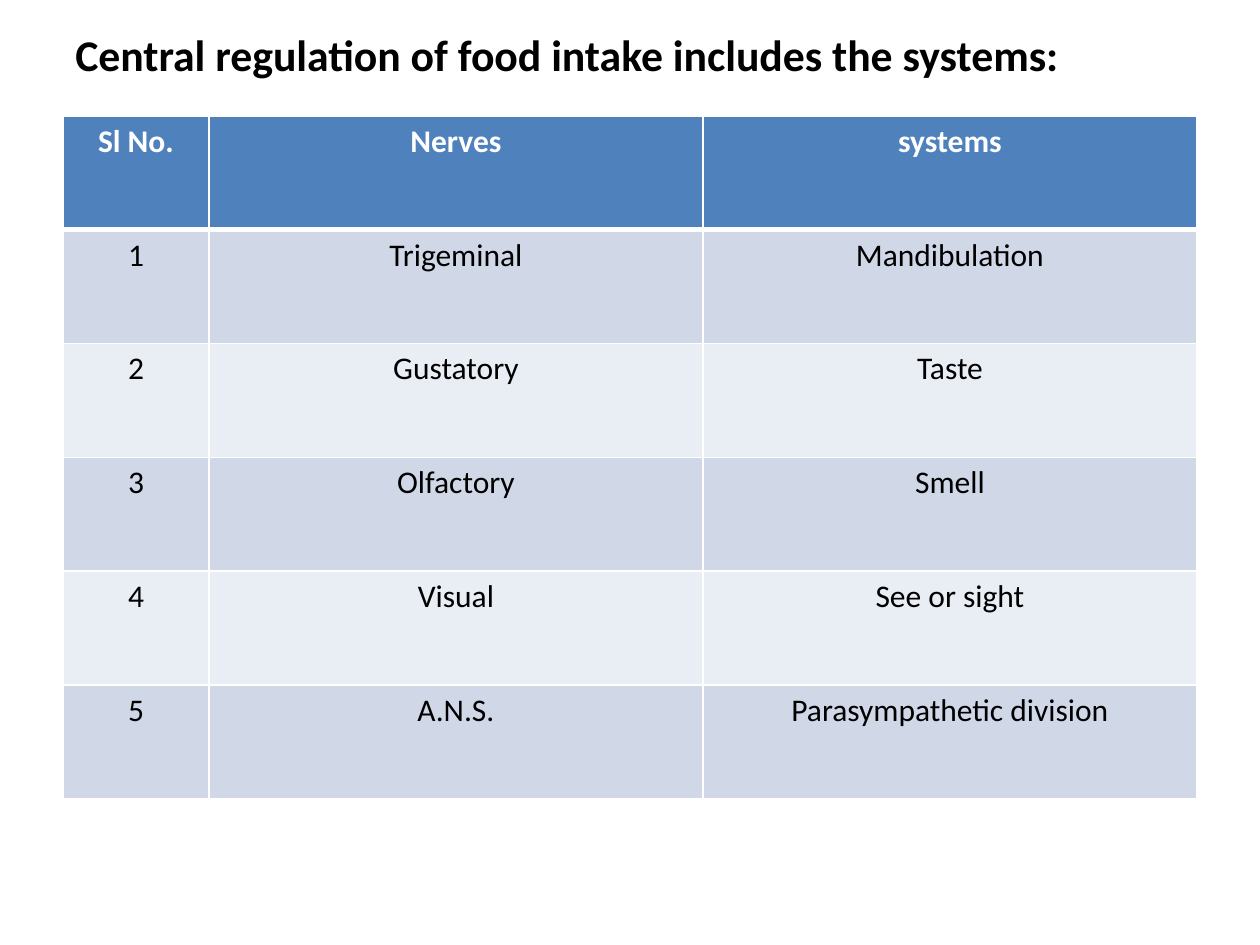
from lxml.etree import SubElement
from pptx import Presentation
from pptx.dml.color import RGBColor
from pptx.enum.text import PP_ALIGN
from pptx.oxml.ns import qn
from pptx.util import Emu, Pt

COLORS = {
    "text": "000000",
    "white": "FFFFFF",
    "header": "4F81BD",
    "odd_row": "D0D8E8",
    "even_row": "E9EDF4",
}
ROWS = [
    ("Sl No.", "Nerves", "systems"),
    ("1", "Trigeminal", "Mandibulation"),
    ("2", "Gustatory", "Taste"),
    ("3", "Olfactory", "Smell"),
    ("4", "Visual", "See or sight"),
    ("5", "A.N.S.", "Parasympathetic division"),
]
NUMBER_WIDTH = 146


def px(length):
    return Emu(round(length * 914400 / 126))


def color(name):
    return RGBColor.from_string(COLORS[name])


def style_paragraph(paragraph, size, color_name, bold, alignment):
    paragraph.alignment = alignment
    font = paragraph.font
    font.name = "Calibri"
    font.size = Pt(size)
    font.bold = bold
    font.color.rgb = color(color_name)


def add_heading(page, left, top, width, height):
    box = page.shapes.add_textbox(px(left), px(top), px(width), px(height))
    box.text_frame.word_wrap = True
    paragraph = box.text_frame.paragraphs[0]
    paragraph.text = "Central regulation of food intake includes the systems:"
    style_paragraph(paragraph, 25, "text", True, PP_ALIGN.JUSTIFY)


def set_borders(cell, bottom_width):
    """Draw white cell borders, 1 pt except for the bottom one."""
    properties = cell._tc.get_or_add_tcPr()
    widths = {"a:lnL": 1, "a:lnR": 1, "a:lnT": 1, "a:lnB": bottom_width}
    for position, (tag, width) in enumerate(widths.items()):
        line = SubElement(properties, qn(tag), w=str(Pt(width)))
        fill = SubElement(line, qn("a:solidFill"))
        SubElement(fill, qn("a:srgbClr"), val=COLORS["white"])
        properties.insert(position, line)


def fill_cell(cell, text, row_index):
    is_header = row_index == 0
    if is_header:
        fill_name = "header"
    else:
        fill_name = "odd_row" if row_index % 2 else "even_row"
    cell.fill.solid()
    cell.fill.fore_color.rgb = color(fill_name)
    # The rule below the header is thicker, so the first data row shares it.
    set_borders(cell, 3 if is_header else 1)
    cell.text = text
    style_paragraph(cell.text_frame.paragraphs[0], 18,
                    "white" if is_header else "text", is_header, PP_ALIGN.CENTER)


def add_nerve_table(page, left, top, width, height):
    frame = page.shapes.add_table(len(ROWS), len(ROWS[0]), px(left), px(top),
                                  px(width), px(height))
    table = frame.table
    text_width = (width - NUMBER_WIDTH) / 2
    for column, column_width in zip(table.columns, (NUMBER_WIDTH, text_width, text_width)):
        column.width = px(column_width)
    for row_index, texts in enumerate(ROWS):
        table.rows[row_index].height = px(height / len(ROWS))
        for column_index, text in enumerate(texts):
            fill_cell(table.cell(row_index, column_index), text, row_index)


def main():
    deck = Presentation()
    deck.slide_width, deck.slide_height = px(1260), px(945)
    page = deck.slides.add_slide(deck.slide_layouts[6])
    page.background.fill.solid()
    page.background.fill.fore_color.rgb = color("white")
    add_heading(page, 63, 22, 1134, 903)
    add_nerve_table(page, 63, 116, 1134, 683)
    deck.save("out.pptx")


if __name__ == "__main__":
    main()
